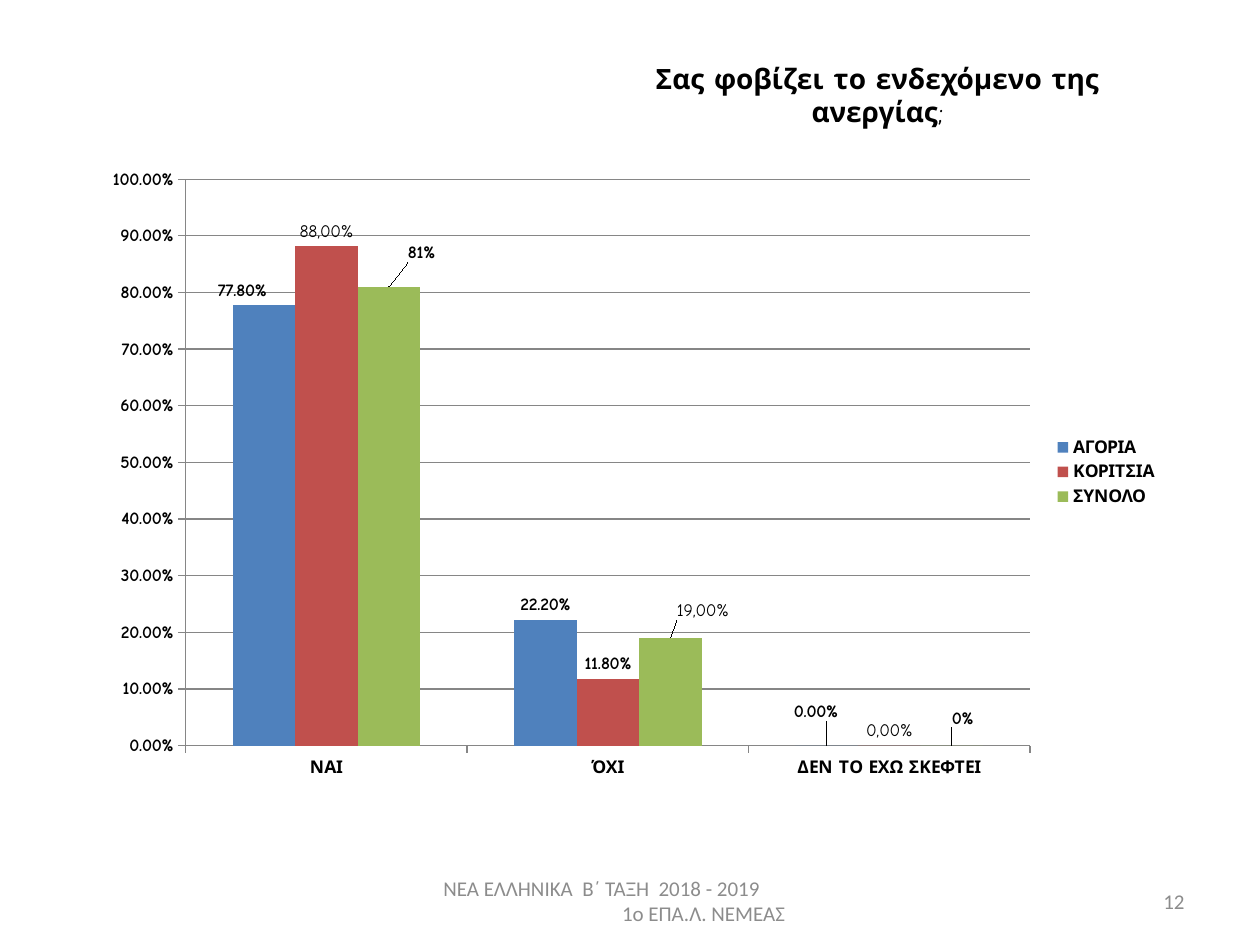
from lxml.etree import SubElement
from pptx import Presentation
from pptx.chart.data import CategoryChartData
from pptx.dml.color import RGBColor
from pptx.enum.chart import XL_CHART_TYPE, XL_LABEL_POSITION, XL_LEGEND_POSITION, XL_TICK_MARK
from pptx.enum.shapes import MSO_SHAPE
from pptx.enum.text import MSO_ANCHOR, PP_ALIGN
from pptx.oxml.ns import qn
from pptx.util import Cm, Pt

# Content
QUESTION = [("Σας φοβίζει το ενδεχόμενο της ανεργίας", True), (";", False)]
FOOTER = [("ΝΕΑ ΕΛΛΗΝΙΚΑ  Β΄ ΤΑΞΗ  2018 - 2019", 0), ("1ο ΕΠΑ.Λ. ΝΕΜΕΑΣ", 3.6)]
PAGE = "12"
ANSWERS = ["ΝΑΙ", "ΌΧΙ", "ΔΕΝ ΤΟ ΕΧΩ ΣΚΕΦΤΕΙ"]
# Moved labels: answer index -> (x shift, y shift, typed text or None)
GROUPS = [
    {"name": "ΑΓΟΡΙΑ", "values": [0.778, 0.222, 0], "color": "4F81BD", "format": "0.00%",
     "labels": {0: (-0.02, 0, None), 2: (-0.01, -0.03, None)}},
    {"name": "ΚΟΡΙΤΣΙΑ", "values": [0.882, 0.118, 0], "color": "C0504D", "format": "0.00%",
     "labels": {0: (0, 0, "88,00%"), 2: (0, 0, "0,00%")}},
    {"name": "ΣΥΝΟΛΟ", "values": [0.81, 0.19, 0], "color": "9BBB59", "format": "0%",
     "labels": {0: (0.03, -0.03, None), 1: (0.03, -0.02, "19,00%"), 2: (0.01, -0.02, None)}},
]

# Places in cm: left, top, width, height
CHART_BOX = (1.78, 3.1, 21.82, 12.83)
QUESTION_BOX = (12.09, 0.91, 11.2, 2.01)
FOOTER_BOX = (8.69, 17.65, 8.05, 1.02)
PAGE_BOX = (18.21, 17.65, 5.92, 1.02)
PLOT_AREA = {"x": 0.09, "y": 0.04, "w": 0.78, "h": 0.89}

# Formats
CHART_FONT = {"name": "Comic Neue", "size": Pt(10), "bold": True}
PLAIN_LABEL = {**CHART_FONT, "bold": False}
QUESTION_FONT = {"name": "Comic Neue", "size": Pt(16)}
FOOTER_FONT = {"name": "Calibri", "size": Pt(12)}
FRAME = {"word_wrap": True, "vertical_anchor": MSO_ANCHOR.MIDDLE}
BLACK, GREY, LINE_GREY, WHITE = "000000", "8C8C8C", "868686", "FFFFFF"


def apply(target, values):
    for key, value in values.items():
        setattr(target, key, value)


def rgb(hex_color):
    return RGBColor.from_string(hex_color)


def style(font, values, color):
    apply(font, values)
    font.color.rgb = rgb(color)


def place(box):
    return [Cm(length) for length in box]


def manual_layout(parent, settings):
    layout = SubElement(parent, qn("c:layout"))
    manual = SubElement(layout, qn("c:manualLayout"))
    for tag, value in settings.items():
        SubElement(manual, qn(f"c:{tag}")).set("val", str(value))
    return layout


def adjust_label(series, index, shift, number_format):
    x, y, text = shift
    label = series.points[index].data_label
    if text:
        run = label.text_frame.paragraphs[0].add_run()
        run.text = text
        style(run.font, PLAIN_LABEL, BLACK)
    else:
        style(label.font, CHART_FONT, BLACK)
    label.position = XL_LABEL_POSITION.OUTSIDE_END
    point_xml = next(item for item in series.data_labels._element.findall(qn("c:dLbl"))
                     if item.find(qn("c:idx")).get("val") == str(index))
    layout = manual_layout(point_xml, {"x": x, "y": y})
    point_xml.find(qn("c:idx")).addnext(layout)
    if not text:
        format_xml = SubElement(point_xml, qn("c:numFmt"))
        format_xml.set("formatCode", number_format)
        format_xml.set("sourceLinked", "0")
        layout.addnext(format_xml)


def add_answers_chart(slide):
    data = CategoryChartData()
    data.categories = ANSWERS
    for group in GROUPS:
        data.add_series(group["name"], group["values"], group["format"])
    chart = slide.shapes.add_chart(XL_CHART_TYPE.COLUMN_CLUSTERED, *place(CHART_BOX), data).chart
    style(chart.font, CHART_FONT, BLACK)
    apply(chart, {"has_title": False, "has_legend": True})
    apply(chart.legend, {"position": XL_LEGEND_POSITION.RIGHT, "include_in_layout": False})

    # Plot area
    plot_xml = chart._chartSpace.chart.plotArea
    for old in plot_xml.findall(qn("c:layout")):
        plot_xml.remove(old)
    plot_xml.insert(0, manual_layout(plot_xml, {
        "layoutTarget": "inner", "xMode": "edge", "yMode": "edge", **PLOT_AREA}))

    # Axes
    apply(chart.value_axis, {"minimum_scale": 0, "maximum_scale": 1, "major_unit": 0.1,
                             "has_major_gridlines": True})
    apply(chart.value_axis.tick_labels, {"number_format": "0.00%", "number_format_is_linked": False})
    for axis in (chart.category_axis, chart.value_axis):
        axis.major_tick_mark = XL_TICK_MARK.OUTSIDE
        axis.format.line.color.rgb = rgb(LINE_GREY)
    chart.value_axis.major_gridlines.format.line.color.rgb = rgb(LINE_GREY)

    # Columns and their labels
    plot = chart.plots[0]
    apply(plot, {"gap_width": 150, "overlap": 0, "vary_by_categories": False})
    for series, group in zip(plot.series, GROUPS):
        series.format.fill.solid()
        series.format.fill.fore_color.rgb = rgb(group["color"])
        apply(series.data_labels, {"show_value": True, "number_format": group["format"],
                                   "number_format_is_linked": False,
                                   "position": XL_LABEL_POSITION.OUTSIDE_END})
        style(series.data_labels.font, CHART_FONT, BLACK)
        for index, shift in group["labels"].items():
            adjust_label(series, index, shift, group["format"])


def add_question(slide):
    banner = slide.shapes.add_shape(MSO_SHAPE.ROUNDED_RECTANGLE, *place(QUESTION_BOX))
    banner.shadow.inherit = False
    banner.fill.solid()
    banner.fill.fore_color.rgb = rgb(WHITE)
    banner.line.fill.background()
    apply(banner.text_frame, FRAME)
    paragraph = banner.text_frame.paragraphs[0]
    paragraph.alignment = PP_ALIGN.CENTER
    for text, bold in QUESTION:
        run = paragraph.add_run()
        run.text = text
        style(run.font, {**QUESTION_FONT, "bold": bold}, BLACK)


def add_footer_text(slide, box, lines, alignment):
    frame = slide.shapes.add_textbox(*place(box)).text_frame
    apply(frame, FRAME)
    for number, (text, indent) in enumerate(lines):
        paragraph = frame.add_paragraph() if number else frame.paragraphs[0]
        paragraph.alignment = alignment
        if indent:
            paragraph._p.get_or_add_pPr().set("marL", str(Cm(indent)))
        run = paragraph.add_run()
        run.text = text
        style(run.font, FOOTER_FONT, GREY)


def main():
    deck = Presentation()
    apply(deck, {"slide_width": Cm(25.4), "slide_height": Cm(19.05)})
    slide = deck.slides.add_slide(deck.slide_layouts[6])
    add_answers_chart(slide)
    add_footer_text(slide, FOOTER_BOX, FOOTER, PP_ALIGN.LEFT)
    add_footer_text(slide, PAGE_BOX, [(PAGE, 0)], PP_ALIGN.RIGHT)
    add_question(slide)
    deck.save("out.pptx")


if __name__ == "__main__":
    main()
